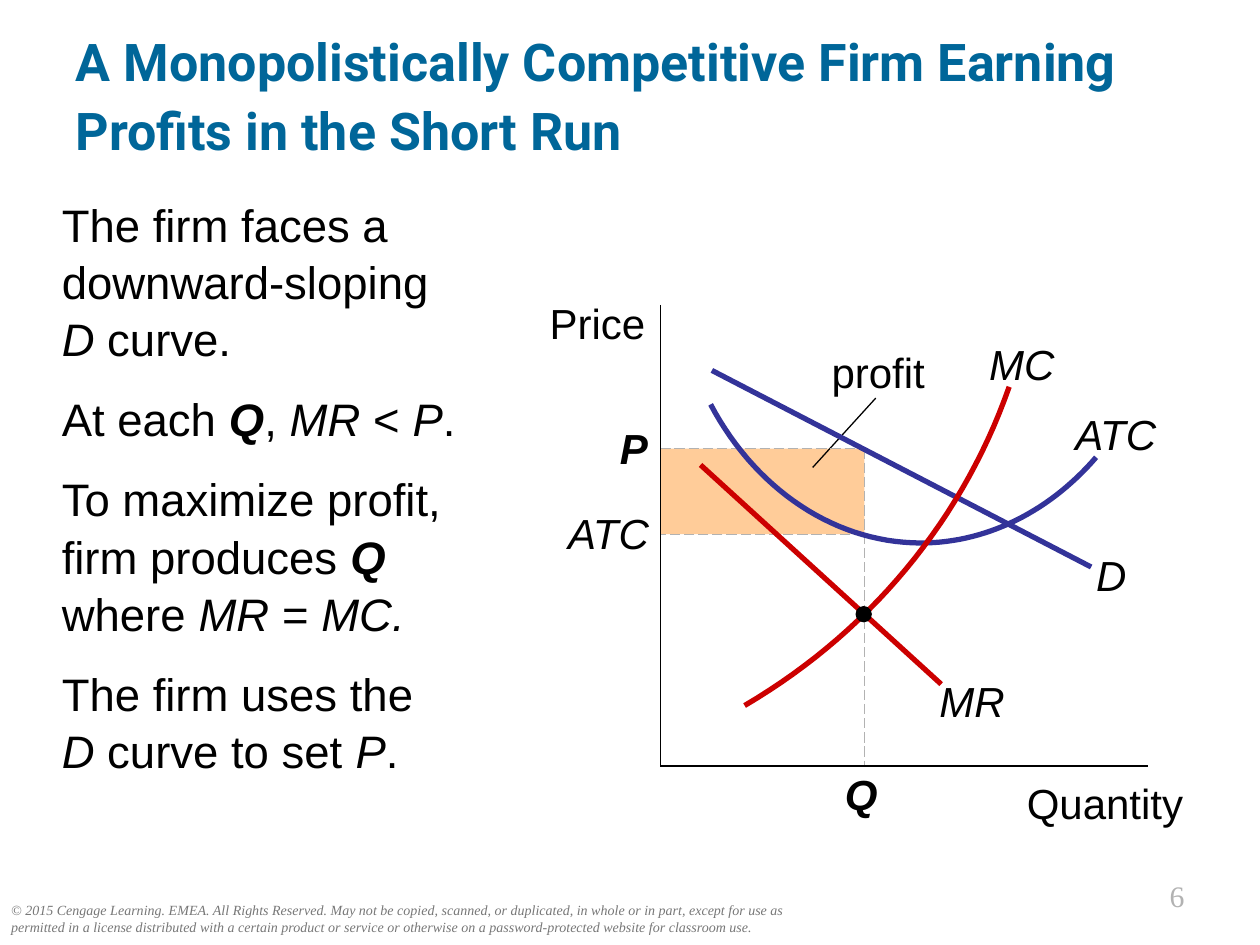
from dataclasses import dataclass

from lxml.etree import SubElement
from pptx import Presentation
from pptx.dml.color import RGBColor
from pptx.enum.dml import MSO_LINE
from pptx.enum.shapes import MSO_CONNECTOR, MSO_SHAPE
from pptx.enum.text import MSO_ANCHOR, MSO_AUTO_SIZE, PP_ALIGN
from pptx.oxml.ns import qn
from pptx.util import Emu, Pt

PX = 9144
COLORS = {
    "text": "000000", "title": "006699", "footer": "777777", "guide": "B2B2B2",
    "profit": "FFCC99", "blue": "333399", "red": "CC0000",
}
LEFT, CENTER, RIGHT = PP_ALIGN.LEFT, PP_ALIGN.CENTER, PP_ALIGN.RIGHT
AXIS_X, AXIS_Y = 524, 608
Q_X, P_Y, ATC_Y, MC_Y = 686, 356, 424, 488
DOT = 13


@dataclass
class Label:
    text: str
    box: tuple[int, int, int, int]
    align: PP_ALIGN = CENTER
    style: str = ""
    size: float = 24
    font: str = "Arial"
    color: str = "text"
    pad: bool = False
    wrap: bool = True


@dataclass
class Line:
    start: tuple[int, int]
    end: tuple[int, int]
    color: str = "text"
    width: float = 0.75
    dashed: bool = False


@dataclass
class Curve:
    points: list[tuple[int, int]]
    color: str


LINES = [
    Line((645, 371), (695, 316)),
    Line((Q_X, ATC_Y), (AXIS_X, ATC_Y), "guide", dashed=True),
    Line((AXIS_X, P_Y), (Q_X, P_Y), "guide", dashed=True),
    Line((Q_X, P_Y), (Q_X, AXIS_Y), "guide", dashed=True),
    Line((AXIS_X, 242), (AXIS_X, AXIS_Y)),
    Line((AXIS_X, AXIS_Y), (911, AXIS_Y)),
    Line((565, 294), (866, 450), "blue", 3),
    Line((556, 369), (747, 543), "red", 3),
]

CURVES = [
    Curve([(870, 363), (833, 406), (783, 431), (731, 431),
           (663, 431), (600, 389), (564, 321)], "blue"),
    Curve([(591, 560), (690, 502), (764, 413), (801, 307)], "red"),
]

LABELS = [
    Label("© 2015 Cengage Learning. EMEA. All Rights Reserved. May not be copied, "
          "scanned, or duplicated, in whole or in part, except for use as permitted "
          "in a license distributed with a certain product or service or otherwise "
          "on a password-protected website for classroom use.",
          (-1, 711, 643, 37), LEFT, "i", 8, "Times New Roman", "footer", pad=True),
    Label("6", (825, 692, 125, 39), RIGHT, "", 17, "Times New Roman", "guide", pad=True),
    Label("profit", (644, 270, 106, 50), pad=True),
    Label("Price", (351, 231, 171, 50), RIGHT, pad=True),
    Label("Quantity", (805, 617, 134, 40), RIGHT),
    Label("P", (492, 335, 22, 40), RIGHT, "bi", wrap=False),
    Label("ATC", (441, 403, 74, 40), RIGHT, "i"),
    Label("ATC", (840, 324, 91, 40), style="i"),
    Label("D", (858, 436, 48, 40), style="i"),
    Label("MR", (739, 536, 65, 40), style="i"),
    Label("MC", (779, 269, 64, 40), style="i"),
    Label("Q", (655, 605, 57, 50), style="bi", pad=True),
]

BODY = [
    [("The firm faces a downward-sloping", ""), ("\n", ""), ("D", "i"), (" curve.", "")],
    [("At each ", ""), ("Q", "bi"), (", ", ""), ("MR", "i"), (" < ", ""),
     ("P", "i"), (".", "")],
    [("To maximize profit, firm produces ", ""), ("Q", "bi"), (" where ", ""),
     ("MR", "i"), (" = ", ""), ("MC.", "i")],
    [("The firm uses the", ""), ("\n", ""), ("D", "i"), (" curve to set ", ""),
     ("P", "i"), (".", "")],
]


def rgb(name: str) -> RGBColor:
    return RGBColor.from_string(COLORS[name])


def emu(*values: int) -> list[Emu]:
    return [Emu(v * PX) for v in values]


def add_run(p, text: str, style: str, size: float, font="Arial", color="text") -> None:
    r = p.add_run()
    r.text = text
    r.font.name, r.font.size = font, Pt(size)
    r.font.bold, r.font.italic = "b" in style, "i" in style
    r.font.color.rgb = rgb(color)


def add_label(s, label: Label) -> None:
    tf = s.shapes.add_textbox(*emu(*label.box)).text_frame
    tf.word_wrap = label.wrap
    if not label.pad:
        tf.margin_left = tf.margin_top = tf.margin_right = tf.margin_bottom = 0
    p = tf.paragraphs[0]
    p.alignment = label.align
    add_run(p, label.text, label.style, label.size, label.font, label.color)


def add_line(s, line: Line) -> None:
    cx = s.shapes.add_connector(MSO_CONNECTOR.STRAIGHT, *emu(*line.start, *line.end))
    SubElement(cx._element.spPr, qn("a:effectLst"))
    cx.line.color.rgb, cx.line.width = rgb(line.color), Pt(line.width)
    if line.dashed:
        cx.line.dash_style = MSO_LINE.LONG_DASH


def bezier(a: float, b: float, c: float, d: float, t: float) -> float:
    u = 1 - t
    return u**3 * a + 3 * u * u * t * b + 3 * u * t * t * c + t**3 * d


def add_curve(s, curve: Curve, steps: int = 30) -> None:
    dots = []
    for i in range(0, len(curve.points) - 1, 3):
        xs, ys = zip(*curve.points[i:i + 4])
        dots += [(round(bezier(*xs, k / steps) * PX), round(bezier(*ys, k / steps) * PX))
                 for k in range(steps + 1)]
    builder = s.shapes.build_freeform(*dots[0], scale=1.0)
    builder.add_line_segments(dots[1:], close=False)
    sp = builder.convert_to_shape()
    sp.shadow.inherit = False
    sp.fill.background()
    sp.line.color.rgb, sp.line.width = rgb(curve.color), Pt(3)


def add_solid(s, kind: MSO_SHAPE, box: tuple[int, int, int, int], color: str) -> None:
    sp = s.shapes.add_shape(kind, *emu(*box))
    sp.shadow.inherit = False
    sp.fill.solid()
    sp.fill.fore_color.rgb = rgb(color)
    sp.line.fill.background()


def place(sp, box: tuple[int, int, int, int], anchor: MSO_ANCHOR):
    sp.left, sp.top, sp.width, sp.height = emu(*box)
    tf = sp.text_frame
    tf.word_wrap, tf.auto_size, tf.vertical_anchor = True, MSO_AUTO_SIZE.NONE, anchor
    return tf


def fill_title(s) -> None:
    p = place(s.shapes.title, (50, 29, 900, 88), MSO_ANCHOR.MIDDLE).paragraphs[0]
    p.alignment, p.line_spacing = LEFT, 1.1
    add_run(p, "A Monopolistically Competitive Firm Earning Profits in the Short Run",
            "b", 29.7, "Roboto", "title")


def fill_body(s) -> None:
    tf = place(s.placeholders[1], (39, 149, 371, 508), MSO_ANCHOR.TOP)
    for i, runs in enumerate(BODY):
        p = tf.add_paragraph() if i else tf.paragraphs[0]
        pPr = p._p.get_or_add_pPr()
        pPr.set("marL", "0")
        pPr.set("indent", "0")
        SubElement(pPr, qn("a:buNone"))
        p.line_spacing, p.space_before = 1.05, Pt(13 if i else 0)
        for text, style in runs:
            if text == "\n":
                p.add_line_break()
                SubElement(p._p[-1], qn("a:rPr"), sz="2600")
            else:
                add_run(p, text, style, 26)


def main() -> None:
    prs = Presentation()
    prs.slide_width, prs.slide_height = emu(1000, 750)
    s = prs.slides.add_slide(prs.slide_layouts[1])
    fill_title(s)
    fill_body(s)
    add_solid(s, MSO_SHAPE.RECTANGLE, (AXIS_X, P_Y, Q_X - AXIS_X, ATC_Y - P_Y), "profit")
    for line in LINES:
        add_line(s, line)
    for curve in CURVES:
        add_curve(s, curve)
    add_solid(s, MSO_SHAPE.OVAL, (Q_X - DOT // 2 - 1, MC_Y - DOT // 2 - 1, DOT, DOT), "text")
    for label in LABELS:
        add_label(s, label)
    prs.save("out.pptx")


if __name__ == "__main__":
    main()
